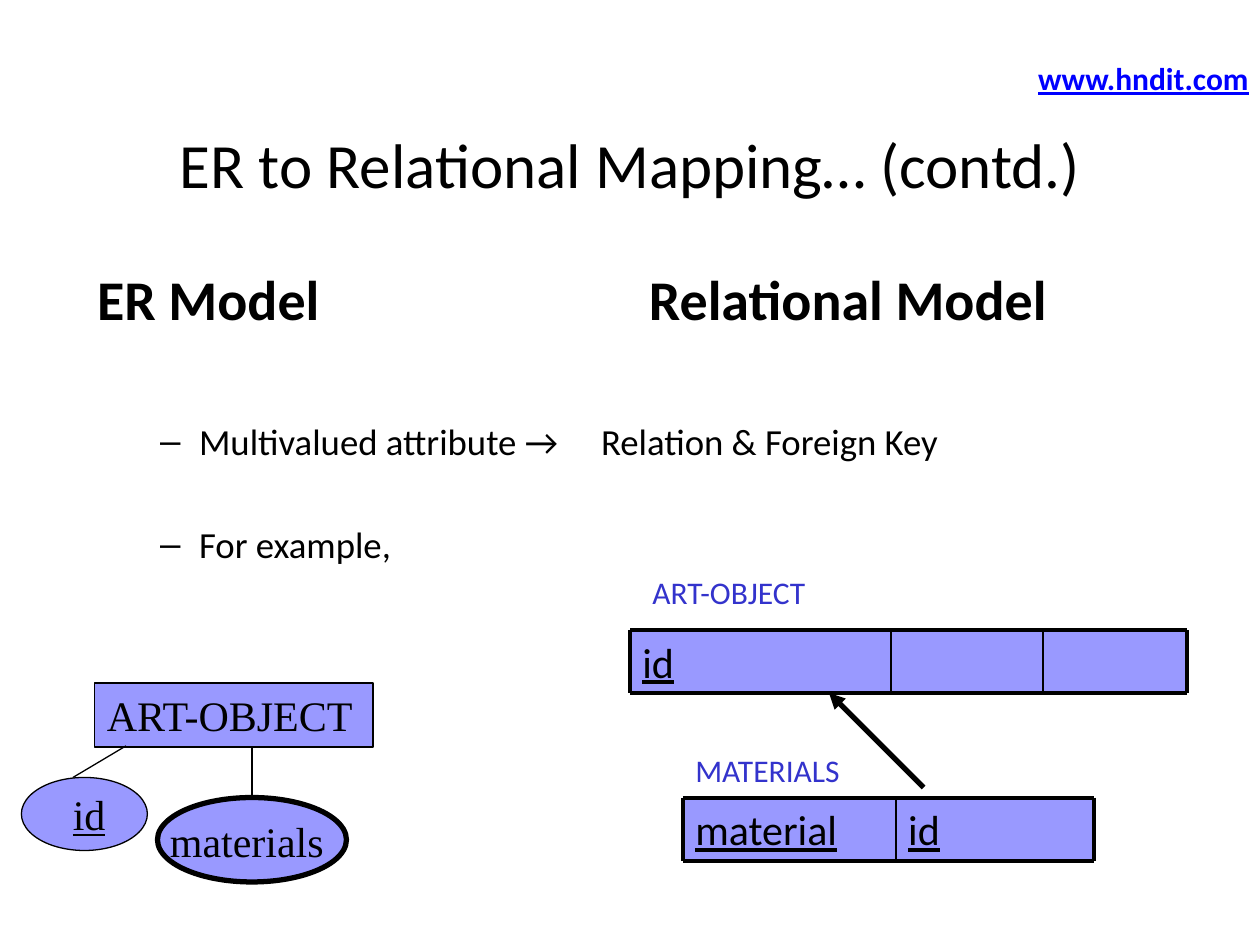
from pptx import Presentation
from pptx.dml.color import RGBColor
from pptx.enum.shapes import MSO_CONNECTOR, MSO_SHAPE
from pptx.enum.text import MSO_ANCHOR, MSO_AUTO_SIZE, PP_ALIGN
from pptx.oxml.ns import qn
from pptx.util import Inches, Pt
from lxml.etree import SubElement

BLACK = RGBColor(0x00, 0x00, 0x00)
LAVENDER = RGBColor(0x99, 0x99, 0xFF)
INDIGO = RGBColor(0x33, 0x33, 0xCC)
LINK_BLUE = RGBColor(0x00, 0x00, 0xFF)
SERIF = "Times New Roman"


def write_text(frame, text, size=24, font="Calibri", color=BLACK, bold=False,
               underline=False, wrap=False):
    frame.word_wrap = wrap
    frame.auto_size = MSO_AUTO_SIZE.NONE
    frame.vertical_anchor = MSO_ANCHOR.TOP
    paragraph = frame.paragraphs[0]
    paragraph.alignment = PP_ALIGN.LEFT
    run = paragraph.add_run()
    run.text = text
    run.font.size = Pt(size)
    run.font.name = font
    run.font.color.rgb = color
    run.font.bold = bold
    run.font.underline = underline


def draw_line(x1, y1, x2, y2, width):
    line = slide.shapes.add_connector(
        MSO_CONNECTOR.STRAIGHT, Inches(x1), Inches(y1), Inches(x2), Inches(y2))
    line.line.color.rgb = BLACK
    line.line.width = Pt(width)
    SubElement(line._element.spPr, qn("a:effectLst"))
    return line


presentation = Presentation()
presentation.slide_width = Inches(10)
presentation.slide_height = Inches(7.5)
slide = presentation.slides.add_slide(presentation.slide_layouts[1])

title = slide.shapes.title
title.left, title.top, title.width, title.height = (
    Inches(0.5), Inches(0.67), Inches(9), Inches(1.25))
write_text(title.text_frame, "ER to Relational Mapping… (contd.)", size=36, wrap=True)
title.text_frame.vertical_anchor = MSO_ANCHOR.MIDDLE
title.text_frame.paragraphs[0].alignment = PP_ALIGN.CENTER

body = slide.placeholders[1]
body.left, body.top, body.width, body.height = (
    Inches(0.67), Inches(1.42), Inches(8.67), Inches(5.67))
body_frame = body.text_frame
body_frame.auto_size = MSO_AUTO_SIZE.NONE
body_frame.margin_top = Inches(0.68)
body_lines = [
    ("ER Model\t\t\tRelational Model", 0, 32, True, 0),
    ("Multivalued attribute →\tRelation & Foreign Key", 1, 21, False, 49.6),
    ("For example,", 1, 21, False, 34),
]
for index, (text, level, size, bold, space) in enumerate(body_lines):
    paragraph = body_frame.paragraphs[0] if index == 0 else body_frame.add_paragraph()
    paragraph.text = text
    paragraph.level = level
    paragraph.space_before = Pt(space)
    margin, hanging = [(0.38, 0.38), (0.81, 0.31)][level]
    properties = paragraph._p.get_or_add_pPr()
    properties.set("marL", str(Inches(margin)))
    properties.set("indent", str(-Inches(hanging)))
    properties.set("defTabSz", str(Inches(1)))
    if level:
        SubElement(properties, qn("a:buChar")).set("char", "–")
    else:
        SubElement(properties, qn("a:buNone"))
    font = paragraph.runs[0].font
    font.name = "Calibri"
    font.size = Pt(size)
    font.bold = bold
    font.color.rgb = BLACK

er_shapes = [
    (MSO_SHAPE.OVAL, 0.17, 6.17, 1, 0.58, 0.75),
    (MSO_SHAPE.OVAL, 1.25, 6.33, 1.5, 0.67, 3),
    (MSO_SHAPE.RECTANGLE, 0.75, 5.42, 2.21, 0.51, 0.75),
]
for kind, left, top, width, height, line_width in er_shapes:
    shape = slide.shapes.add_shape(
        kind, Inches(left), Inches(top), Inches(width), Inches(height))
    shape.shadow.inherit = False
    shape.fill.solid()
    shape.fill.fore_color.rgb = LAVENDER
    shape.line.color.rgb = BLACK
    shape.line.width = Pt(line_width)
    if kind == MSO_SHAPE.RECTANGLE:
        write_text(shape.text_frame, "ART-OBJECT", font=SERIF)

draw_line(2, 6.33, 2, 5.92, 0.75)
draw_line(0.58, 6.17, 1, 5.92, 0.75)
foreign_key_arrow = draw_line(7.33, 6.25, 6.58, 5.5, 3)
SubElement(foreign_key_arrow.line._get_or_add_ln(), qn("a:tailEnd")).set("type", "triangle")

row_height = 0.5
relations = [
    (5, [5, 7.07, 8.28, 9.42], ["id", "", ""]),
    (6.33, [5.42, 7.11, 8.68], ["material", "id"]),
]
for top, edges, names in relations:
    bottom = top + row_height
    for left, right, name in zip(edges, edges[1:], names):
        cell = slide.shapes.add_shape(
            MSO_SHAPE.RECTANGLE, Inches(left), Inches(top),
            Inches(right - left), Inches(row_height))
        cell.shadow.inherit = False
        cell.fill.solid()
        cell.fill.fore_color.rgb = LAVENDER
        cell.line.fill.background()
        if name:
            write_text(cell.text_frame, name, underline=True, wrap=True)
    for y in (top, bottom):
        draw_line(edges[0], y, edges[-1], y, 2.25)
    for x in edges:
        draw_line(x, top, x, bottom, 2.25 if x in (edges[0], edges[-1]) else 1)

labels = [
    ("materials", 1.25, 6.42, 1.58, 0.5, {"font": SERIF}),
    ("id", 0.48, 6.21, 0.46, 0.5, {"font": SERIF, "underline": True}),
    ("ART-OBJECT", 5.08, 4.5, 1.81, 0.7, {"size": 18, "color": INDIGO}),
    ("MATERIALS", 5.42, 5.91, 1.66, 0.4, {"size": 18, "color": INDIGO}),
    ("www.hndit.com", 8.14, 0.42, 1.88, 0.4,
     {"size": 18, "color": LINK_BLUE, "bold": True, "underline": True}),
]
for text, left, top, width, height, style in labels:
    label = slide.shapes.add_textbox(
        Inches(left), Inches(top), Inches(width), Inches(height))
    write_text(label.text_frame, text, **style)

presentation.save("out.pptx")
